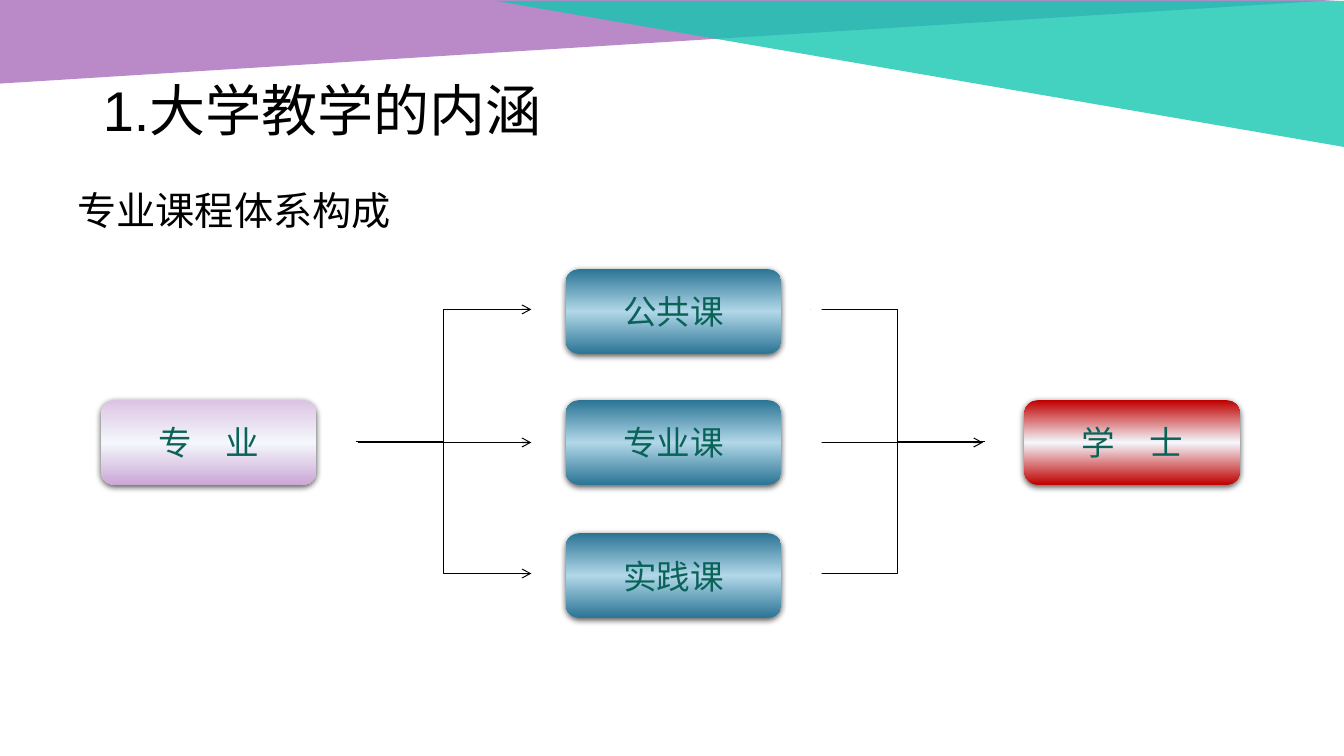
from dataclasses import dataclass

from lxml import etree
from pptx import Presentation
from pptx import util as u
from pptx.dml import color
from pptx.enum import shapes, text
from pptx.oxml import ns, parse_xml

A = ns.nsdecls("a")
IN = u.Inches


@dataclass(frozen=True)
class Theme:
    latin: str = "Arial"
    chinese: str = "Noto Sans CJK SC"
    ink: str = "000000"
    paper: str = "FFFFFF"
    label: str = "0A6358"
    violet: str = "A86CBB"
    teal: str = "13C7AF"
    course: tuple = ("2B7495", "B1D7E8", "2B7495")
    major: tuple = ("DCC4E4", "F4F7FC", "CBA7D6")
    degree: tuple = ("C00000", "F4F7FC", "C00000")
    title_size: int = 40
    subtitle_size: int = 28
    label_size: int = 24
    line_width: float = 0.75


class Board:
    def __init__(self, deck, theme):
        self.theme = theme
        self.slide = deck.slides.add_slide(deck.slide_layouts[5])
        self.items = self.slide.shapes

    def style(self, target, values):
        for key, value in values.items():
            setattr(target, key, value)

    def wording(self, frame, words, size, ink, font, frame_format, paragraph_format):
        self.style(frame, {"word_wrap": True, **frame_format})
        paragraph = frame.paragraphs[0]
        self.style(paragraph, paragraph_format)
        run = paragraph.add_run()
        run.text = words
        self.style(run.font, {"size": u.Pt(size), "name": font})
        run.font.color.rgb = color.RGBColor.from_string(ink)
        east_asian = etree.SubElement(run.font._element, ns.qn("a:ea"))
        east_asian.set("typeface", self.theme.chinese)

    def title(self, words, left, top, width, height):
        heading = self.items.title
        self.items._spTree.append(heading._element)
        self.style(heading, {"left": IN(left), "top": IN(top),
                             "width": IN(width), "height": IN(height)})
        self.wording(heading.text_frame, words, self.theme.title_size,
                     self.theme.ink, self.theme.latin,
                     {"vertical_anchor": text.MSO_ANCHOR.MIDDLE},
                     {"alignment": text.PP_ALIGN.LEFT, "line_spacing": 0.9})

    def subtitle(self, words, left, top, width, height):
        box = self.items.add_textbox(IN(left), IN(top), IN(width), IN(height))
        self.wording(box.text_frame, words, self.theme.subtitle_size,
                     self.theme.ink, self.theme.chinese,
                     {"vertical_anchor": text.MSO_ANCHOR.TOP},
                     {"alignment": text.PP_ALIGN.JUSTIFY, "line_spacing": 0.9})

    def plain(self, kind, left, top, width, height, tint):
        shape = self.items.add_shape(kind, IN(left), IN(top), IN(width), IN(height))
        shape.shadow.inherit = False
        shape.line.fill.background()
        shape.fill.solid()
        shape.fill.fore_color.rgb = color.RGBColor.from_string(tint)
        return shape

    def banner(self, left, top, width, height, tint, flips):
        kind = shapes.MSO_SHAPE.RIGHT_TRIANGLE
        triangle = self.plain(kind, left, top, width, height, tint)
        properties = triangle._element.spPr
        for flip in flips:
            properties.xfrm.set(flip, "1")
        tone = properties.find(".//" + ns.qn("a:srgbClr"))
        etree.SubElement(tone, ns.qn("a:alpha")).set("val", "80000")

    def card(self, words, left, top, tints):
        kind = shapes.MSO_SHAPE.ROUNDED_RECTANGLE
        card = self.plain(kind, left, top, 2.14, 0.84, tints[0])
        properties = card._element.spPr
        stops = "".join(
            f'<a:gs pos="{step * 50000}"><a:srgbClr val="{tint}"/></a:gs>'
            for step, tint in enumerate(tints))
        gradient = parse_xml(f'<a:gradFill {A} rotWithShape="1"><a:gsLst>{stops}</a:gsLst>'
                             '<a:lin ang="5400000" scaled="0"/></a:gradFill>')
        properties.replace(properties.find(ns.qn("a:solidFill")), gradient)
        shadow = parse_xml(
            f'<a:outerShdw {A} blurRad="{u.Pt(4.5)}" dist="{u.Pt(1.5)}" dir="5400000" '
            'algn="ctr" rotWithShape="0"><a:srgbClr val="000000">'
            '<a:alpha val="63000"/></a:srgbClr></a:outerShdw>')
        properties.find(ns.qn("a:effectLst")).append(shadow)
        self.wording(card.text_frame, words, self.theme.label_size,
                     self.theme.label, self.theme.latin,
                     {"vertical_anchor": text.MSO_ANCHOR.MIDDLE},
                     {"alignment": text.PP_ALIGN.CENTER})

    def arrow(self, kind, start, end):
        arrow = self.items.add_connector(kind, *map(IN, start + end))
        arrow.line.width = u.Pt(self.theme.line_width)
        arrow.line.color.rgb = color.RGBColor.from_string(self.theme.ink)
        properties = arrow._element.spPr
        outline = properties.find(ns.qn("a:ln"))
        etree.SubElement(outline, ns.qn("a:tailEnd")).set("type", "arrow")
        etree.SubElement(properties, ns.qn("a:effectLst"))

    def branches(self, hub, tip, straight_start, straight_end):
        for row in (3.07, 5.69):
            self.arrow(shapes.MSO_CONNECTOR.ELBOW, (hub, 4.38), (tip, row))
        self.arrow(shapes.MSO_CONNECTOR.STRAIGHT,
                   (straight_start, 4.39), (straight_end, 4.39))


def main():
    deck = Presentation()
    deck.slide_width, deck.slide_height = IN(13.33), IN(7.5)
    theme = Theme()
    board = Board(deck, theme)

    board.banner(0, 0, 13.28, 0.83, theme.violet, ["flipV"])
    board.banner(4.92, 0.01, 8.42, 1.45, theme.teal, ["flipH", "flipV"])
    board.subtitle("专业课程体系构成", 0.67, 1.85, 12, 4.98)
    board.title("1.大学教学的内涵", 0.92, 0.4, 11.5, 1.45)

    board.branches(3.53, 5.27, 3.55, 5.27)
    for course, top in (("公共课", 2.67), ("专业课", 3.97), ("实践课", 5.29)):
        board.card(course, 5.61, top, theme.course)
    board.card("专　业", 1, 3.97, theme.major)

    board.branches(9.77, 8.04, 8.04, 9.75)
    board.plain(shapes.MSO_SHAPE.RECTANGLE, 8.04, 2.94, 0.11, 2.91, theme.paper)
    board.card("学　士", 10.16, 3.97, theme.degree)

    deck.save("out.pptx")


if __name__ == "__main__":
    main()
